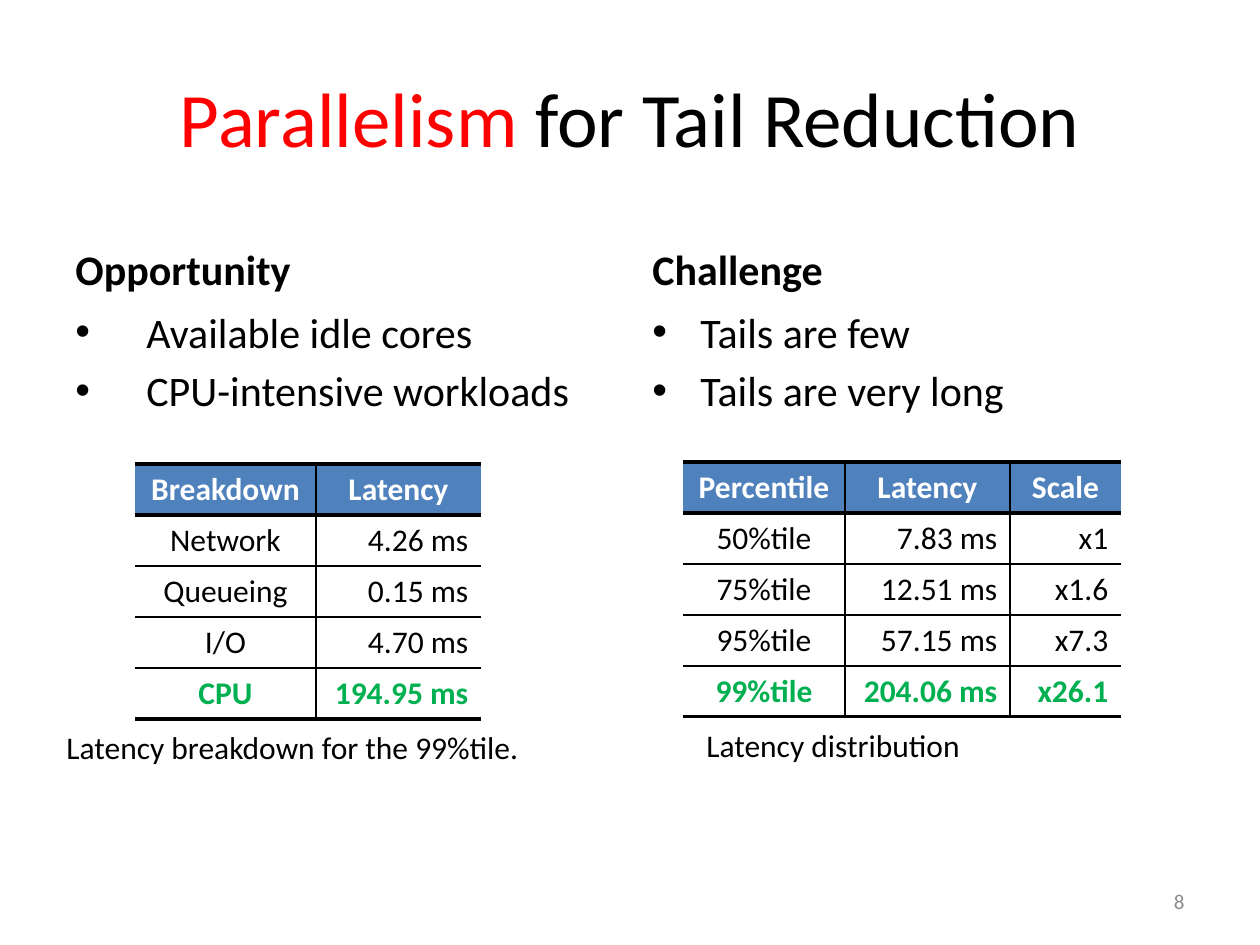
from dataclasses import dataclass

from lxml.etree import SubElement
from pptx import Presentation
from pptx.dml.color import RGBColor as Color
from pptx.enum.text import MSO_ANCHOR as Anchor, PP_ALIGN as Align
from pptx.oxml.ns import qn
from pptx.util import Emu, Pt


@dataclass(frozen=True)
class Theme:
    font: str = "Calibri"
    black: str = "000000"
    white: str = "FFFFFF"
    red: str = "FF0000"
    green: str = "00B050"
    blue: str = "4F81BD"
    gray: str = "8C8C8C"
    title: int = 44
    body: int = 24
    small: int = 18
    number: int = 12


theme = Theme()
PX = 914400 / 126

deck = Presentation()
deck.slide_width, deck.slide_height = Emu(round(1260 * PX)), Emu(round(945 * PX))
page = deck.slides.add_slide(deck.slide_layouts[6])


def add_text(area, lines, size, color=theme.black, bold=False,
             align=Align.LEFT, anchor=Anchor.MIDDLE, space=0, indent=0):
    """Add a text box; an indent in px makes its lines bulleted."""
    box = page.shapes.add_textbox(*(Emu(round(v * PX)) for v in area))
    frame = box.text_frame
    frame.word_wrap = True
    frame.vertical_anchor = anchor
    frame.text = "\n".join(lines)
    for para in frame.paragraphs:
        para.alignment = align
        para.space_before = Pt(space)
        for span in para.runs:
            span.font.name = theme.font
            span.font.size = Pt(size)
            span.font.bold = bold
            span.font.color.rgb = Color.from_string(color)
        if indent:
            props = para._p.get_or_add_pPr()
            props.set("marL", str(round(indent * PX)))
            props.set("indent", str(round(-indent * PX)))
            SubElement(props, qn("a:buFont"), typeface="Arial")
            SubElement(props, qn("a:buChar"), char="•")
    return box


def set_border(cell, side, width):
    """Draw one cell edge in black, or hide it when the width is 0."""
    props = cell._tc.get_or_add_tcPr()
    line = SubElement(props, qn(f"a:ln{side}"), w=str(Pt(width)))
    if width:
        fill = SubElement(line, qn("a:solidFill"))
        SubElement(fill, qn("a:srgbClr"), val=theme.black)
    else:
        SubElement(line, qn("a:noFill"))


title = add_text((63, 38, 1134, 158), ["Parallelism"], theme.title, theme.red,
                 align=Align.CENTER)
rest = title.text_frame.paragraphs[0].add_run()
rest.text = " for Tail Reduction"
rest.font.name = theme.font
rest.font.size = Pt(theme.title)
rest.font.color.rgb = Color.from_string(theme.black)

columns = [
    (63, 71, "Opportunity", ["Available idle cores", "CPU-intensive workloads"]),
    (640, 48, "Challenge", ["Tails are few", "Tails are very long"]),
]
for left, indent, heading, bullets in columns:
    add_text((left, 212, 557, 88), [heading], theme.body, bold=True,
             anchor=Anchor.BOTTOM, space=4.8)
    add_text((left, 300, 557, 544), bullets, theme.body,
             anchor=Anchor.TOP, space=4.8, indent=indent)

ROW_HEIGHT = 51
tables = [
    (135, 464, [181, 165], [
        ["Breakdown", "Latency"],
        ["Network", "4.26 ms"],
        ["Queueing", "0.15 ms"],
        ["I/O", "4.70 ms"],
        ["CPU", "194.95 ms"],
    ]),
    (683, 462, [162, 165, 111], [
        ["Percentile", "Latency", "Scale"],
        ["50%tile", "7.83 ms", "x1"],
        ["75%tile", "12.51 ms", "x1.6"],
        ["95%tile", "57.15 ms", "x7.3"],
        ["99%tile", "204.06 ms", "x26.1"],
    ]),
]
for left, top, widths, rows in tables:
    area = (left, top, sum(widths), ROW_HEIGHT * len(rows))
    table = page.shapes.add_table(
        len(rows), len(widths), *(Emu(round(v * PX)) for v in area)).table
    table.horz_banding = False
    for column, width in zip(table.columns, widths):
        column.width = Emu(round(width * PX))
    last_row, last_col = len(rows) - 1, len(widths) - 1
    for r, row in enumerate(rows):
        for c, text in enumerate(row):
            cell = table.cell(r, c)
            set_border(cell, "L", 1 if c > 0 else 0)
            set_border(cell, "R", 1 if c < last_col else 0)
            set_border(cell, "T", 2 if r < 2 else 1)
            set_border(cell, "B", 2 if r in (0, last_row) else 1)
            if r == 0:
                cell.fill.solid()
                cell.fill.fore_color.rgb = Color.from_string(theme.blue)
                color = theme.white
            else:
                cell.fill.background()
                color = theme.green if r == last_row else theme.black
            if r == 0 and c > 0:
                cell.vertical_anchor = Anchor.MIDDLE
            cell.text = text
            para = cell.text_frame.paragraphs[0]
            para.alignment = Align.CENTER if r == 0 or c == 0 else Align.RIGHT
            font = para.runs[0].font
            font.name = theme.font
            font.size = Pt(theme.small)
            font.bold = r in (0, last_row)
            font.color.rgb = Color.from_string(color)

add_text((54, 706, 566, 82), ["Latency breakdown for the 99%tile."], theme.small)
add_text((694, 704, 566, 82), ["Latency distribution"], theme.small)
add_text((903, 876, 294, 50), ["8"], theme.number, theme.gray, align=Align.RIGHT)

deck.save("out.pptx")
